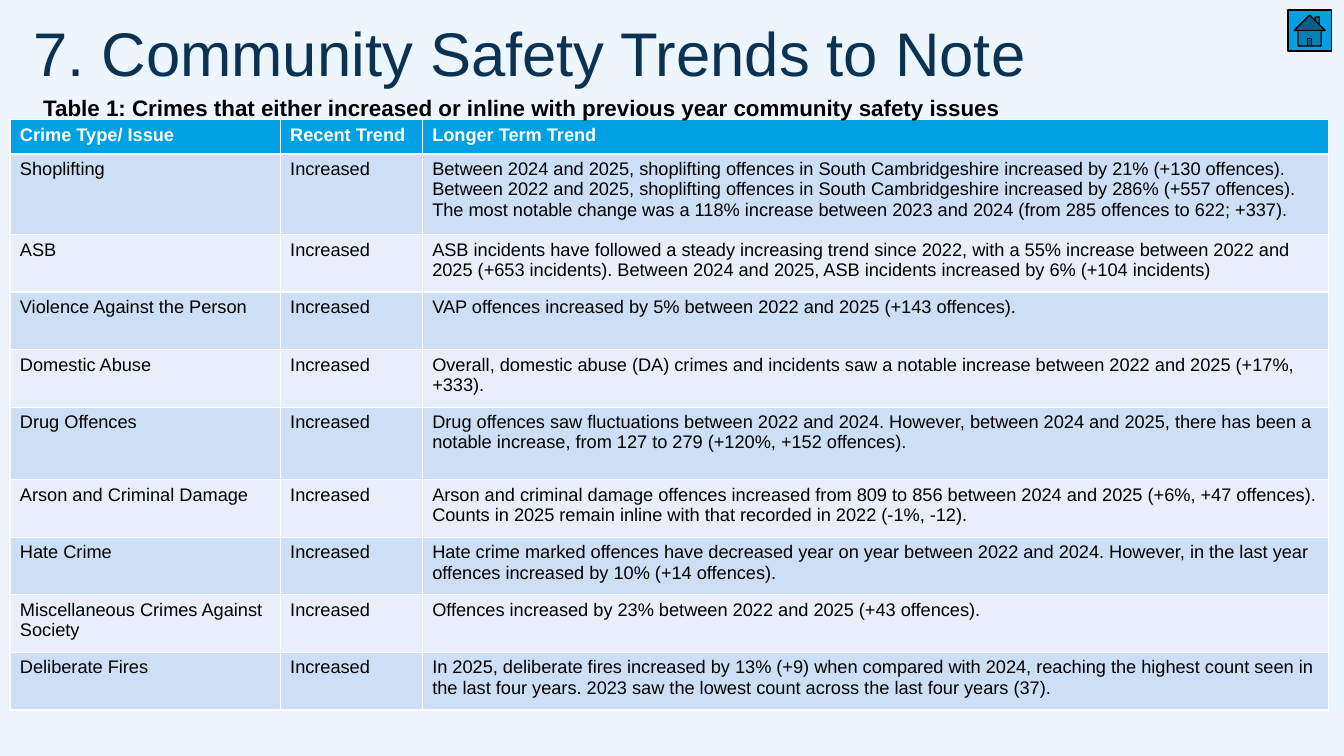
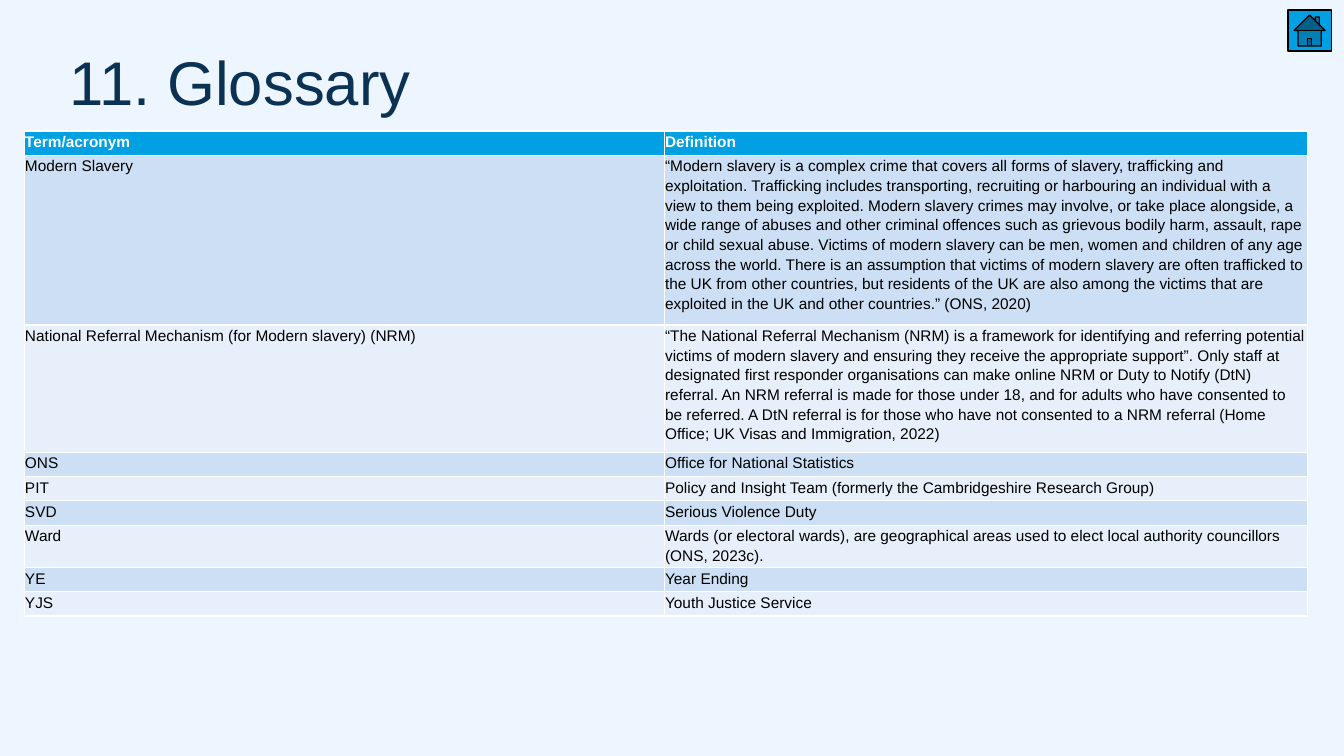
from pptx import Presentation
from pptx.dml.color import RGBColor
from pptx.enum.shapes import MSO_SHAPE
from pptx.util import Cm, Pt

HOME = MSO_SHAPE.ACTION_BUTTON_HOME
FONT = "Arial"
PAPER, NAVY, BLUE = "EDF6FF", "0B3153", "00A0E2"
BLACK, WHITE = "000000", "FFFFFF"
BANDS = "CCDFF4", "E7F0FA"

TRENDS = [
    ("Crime Type/ Issue", "Recent Trend", "Longer Term Trend"),
    ("Shoplifting", "Increased",
     "Between 2024 and 2025, shoplifting offences in South Cambridgeshire "
     "increased by 21% (+130 offences). Between 2022 and 2025, shoplifting "
     "offences in South Cambridgeshire increased by 286% (+557 offences). "
     "The most notable change was a 118% increase between 2023 and 2024 "
     "(from 285 offences to 622; +337)."),
    ("ASB", "Increased",
     "ASB incidents have followed a steady increasing trend since 2022, "
     "with a 55% increase between 2022 and 2025 (+653 incidents). Between "
     "2024 and 2025, ASB incidents increased by 6% (+104 incidents)"),
    ("Violence Against the Person", "Increased",
     "VAP offences increased by 5% between 2022 and 2025 (+143 offences)."),
    ("Domestic Abuse", "Increased",
     "Overall, domestic abuse (DA) crimes and incidents saw a notable "
     "increase between 2022 and 2025 (+17%, +333)."),
    ("Drug Offences", "Increased",
     "Drug offences saw fluctuations between 2022 and 2024. However, "
     "between 2024 and 2025, there has been a notable increase, from 127 "
     "to 279 (+120%, +152 offences)."),
    ("Arson and Criminal Damage", "Increased",
     "Arson and criminal damage offences increased from 809 to 856 between "
     "2024 and 2025 (+6%, +47 offences). Counts in 2025 remain inline with "
     "that recorded in 2022 (-1%, -12)."),
    ("Hate Crime", "Increased",
     "Hate crime marked offences have decreased year on year between 2022 "
     "and 2024. However, in the last year offences increased by 10% "
     "(+14 offences)."),
    ("Miscellaneous Crimes Against Society", "Increased",
     "Offences increased by 23% between 2022 and 2025 (+43 offences)."),
    ("Deliberate Fires", "Increased",
     "In 2025, deliberate fires increased by 13% (+9) when compared with "
     "2024, reaching the highest count seen in the last four years. 2023 "
     "saw the lowest count across the last four years (37)."),
]

TERMS = [
    ("Term/acronym", "Definition"),
    ("Modern Slavery",
     "“Modern slavery is a complex crime that covers all forms of slavery, "
     "trafficking and exploitation. Trafficking includes transporting, "
     "recruiting or harbouring an individual with a view to them being "
     "exploited. Modern slavery crimes may involve, or take place "
     "alongside, a wide range of abuses and other criminal offences such "
     "as grievous bodily harm, assault, rape or child sexual abuse. "
     "Victims of modern slavery can be men, women and children of any age "
     "across the world. There is an assumption that victims of modern "
     "slavery are often trafficked to the UK from other countries, but "
     "residents of the UK are also among the victims that are exploited "
     "in the UK and other countries.” (ONS, 2020)"),
    ("National Referral Mechanism (for Modern slavery) (NRM)",
     "“The National Referral Mechanism (NRM) is a framework for "
     "identifying and referring potential victims of modern slavery and "
     "ensuring they receive the appropriate support”. Only staff at "
     "designated first responder organisations can make online NRM or "
     "Duty to Notify (DtN) referral. An NRM referral is made for those "
     "under 18, and for adults who have consented to be referred. A DtN "
     "referral is for those who have not consented to a NRM referral "
     "(Home Office; UK Visas and Immigration, 2022)"),
    ("ONS", "Office for National Statistics"),
    ("PIT", "Policy and Insight Team (formerly the Cambridgeshire Research "
     "Group)"),
    ("SVD", "Serious Violence Duty"),
    ("Ward", "Wards (or electoral wards), are geographical areas used to "
     "elect local authority councillors (ONS, 2023c)."),
    ("YE", "Year Ending"),
    ("YJS", "Youth Justice Service"),
]


def rgb(color):
    return RGBColor.from_string(color)


def paint(fill, color):
    fill.solid()
    fill.fore_color.rgb = rgb(color)


def style(para, size, color, bold=False):
    para.font.name = FONT
    para.font.size = Pt(size)
    para.font.bold = bold
    para.font.color.rgb = rgb(color)


def add_text(slide, text, left, top, width, height, size, color, bold=False):
    box = slide.shapes.add_textbox(Cm(left), Cm(top), Cm(width), Cm(height))
    frame = box.text_frame
    frame.word_wrap = True
    frame.text = text
    style(frame.paragraphs[0], size, color, bold)
    return frame


def add_title(slide, text, left, top):
    frame = add_text(slide, text, left, top, 29.21, 3.38, 44, NAVY)
    frame.margin_left = frame.margin_right = 0
    frame.margin_top = frame.margin_bottom = 0
    frame.paragraphs[0].line_spacing = 0.9


def add_home(slide):
    home = slide.shapes.add_shape(HOME, Cm(32.46), Cm(0.25), Cm(1.09), Cm(1.04))
    home.shadow.inherit = False
    paint(home.fill, BLUE)
    home.line.color.rgb = rgb(BLACK)
    home.line.width = Pt(1)


def add_grid(slide, rows, left, top, widths, heights, size, tight=False):
    """Banded table; tight cells have thin margins and open line spacing."""
    table = slide.shapes.add_table(
        len(rows), len(widths), Cm(left), Cm(top),
        Cm(sum(widths)), Cm(sum(heights))).table
    for column, width in zip(table.columns, widths):
        column.width = Cm(width)
    for i, (row, height) in enumerate(zip(rows, heights)):
        table.rows[i].height = Cm(height)
        head = i == 0
        for j, text in enumerate(row):
            cell = table.cell(i, j)
            cell.text = text
            paint(cell.fill, BLUE if head else BANDS[(i - 1) % 2])
            para = cell.text_frame.paragraphs[0]
            style(para, size, WHITE if head else BLACK, head)
            if tight:
                cell.margin_left = cell.margin_right = Cm(0.02)
                cell.margin_top = cell.margin_bottom = 0
                para.line_spacing = 1.15
                para.space_after = Pt(10)


def add_slide(deck, title, left, top):
    slide = deck.slides.add_slide(deck.slide_layouts[6])
    paint(slide.background.fill, PAPER)
    add_title(slide, title, left, top)
    add_home(slide)
    return slide


def main():
    deck = Presentation()
    deck.slide_width, deck.slide_height = Cm(33.87), Cm(19.05)

    trends = add_slide(deck, "7. Community Safety Trends to Note", 0.84, 0.58)
    add_grid(trends, TRENDS, 0.25, 3.02, [6.81, 3.58, 22.84],
             [0.86, 2.03] + [1.45] * 3 + [1.83] + [1.45] * 4, 13)
    add_text(trends, "Table 1: Crimes that either increased or inline with "
             "previous year community safety issues",
             0.84, 2.26, 32.05, 0.94, 16, BLACK, True)

    terms = add_slide(deck, "11. Glossary", 1.75, 1.32)
    add_grid(terms, TERMS, 0.61, 3.3, [16.13, 16.21],
             [0.61] + [2.67] * 2 + [0.61] * 6, 11, True)

    deck.save("out.pptx")


if __name__ == "__main__":
    main()
